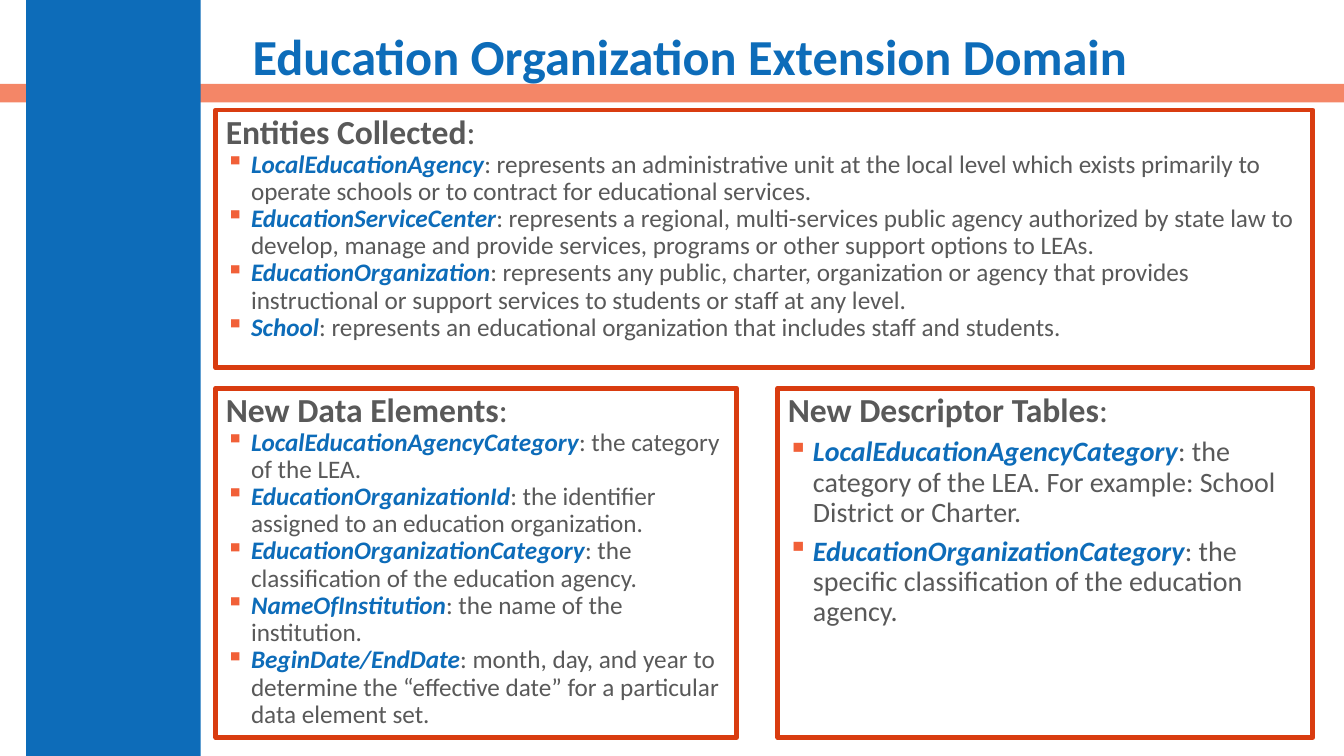
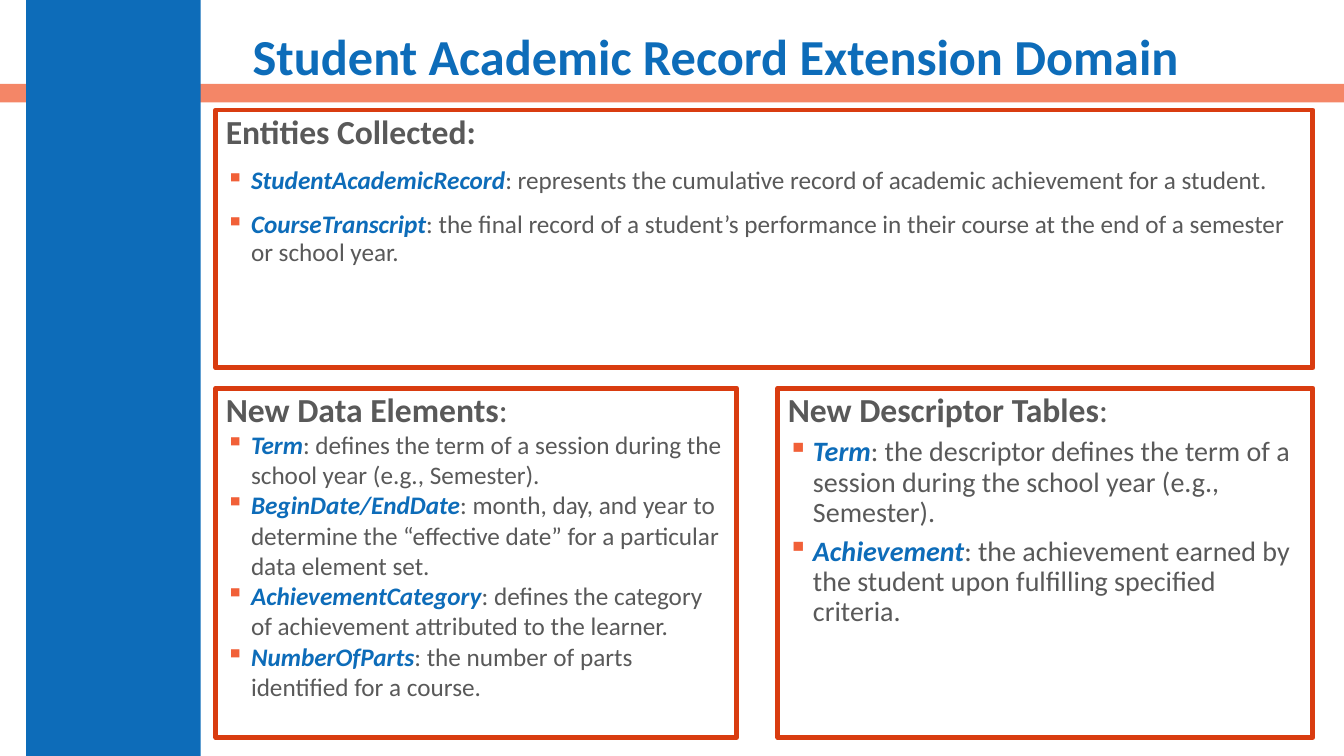
from dataclasses import dataclass

from lxml import etree
from pptx import Presentation
from pptx import util as u
from pptx.dml.color import RGBColor
from pptx.enum import shapes, text
from pptx.oxml import ns


@dataclass(frozen=True)
class Theme:
    font: str = "Calibri"
    blue: str = "0D6CB9"
    orange: str = "F16038"
    border: str = "D93C10"
    body: str = "595959"
    title_size: float = 36
    heading_size: float = 24
    border_width: float = 3.5
    stripe_opacity: int = 76
    line_spacing: float = 0.9
    bullet_indent: float = 0.25


@dataclass(frozen=True)
class Area:
    column: float
    row: float
    columns: float
    rows: float


@dataclass(frozen=True)
class Entry:
    term: str
    meaning: str


@dataclass(frozen=True)
class Panel:
    heading: str
    entries: tuple[Entry, ...]
    size: float = 18
    space_before: float = 0
    line_spacing: float = 0.9
    bold_colon: bool = False


@dataclass(frozen=True)
class Domain:
    title: str
    panels: tuple[Panel, Panel, Panel]


THEME = Theme()
WIDTH, HEIGHT = u.Inches(13.333), u.Inches(7.5)
GRID_COLUMNS, GRID_ROWS = 16, 9

STRIPE = Area(0, 1, GRID_COLUMNS, 0.22)
SIDEBAR = Area(0.31, 0, 2.08, GRID_ROWS)
TITLE = Area(2.89, 0.22, 12.64, 0.98)

LEFT, RIGHT, TOP, BOTTOM = 2.57, 15.63, 1.31, 8.78
LOWER_TOP, RIGHT_START = 4.62, 9.26
ROW_GAP, COLUMN_GAP = 0.24, 0.49
PANEL_AREAS = (
    Area(LEFT, TOP, RIGHT - LEFT, LOWER_TOP - ROW_GAP - TOP),
    Area(LEFT, LOWER_TOP, RIGHT_START - COLUMN_GAP - LEFT, BOTTOM - LOWER_TOP),
    Area(RIGHT_START, LOWER_TOP, RIGHT - RIGHT_START, BOTTOM - LOWER_TOP),
)

DATES = Entry(
    "BeginDate/EndDate",
    "month, day, and year to determine the “effective date” for a particular data element set.",
)

DOMAINS = (
    Domain("Education Organization Extension Domain", (
        Panel("Entities Collected", (
            Entry("LocalEducationAgency", "represents an administrative unit at the local level which "
                  "exists primarily to operate schools or to contract for educational services."),
            Entry("EducationServiceCenter", "represents a regional, multi-services public agency "
                  "authorized by state law to develop, manage and provide services, programs or "
                  "other support options to LEAs."),
            Entry("EducationOrganization", "represents any public, charter, organization or agency "
                  "that provides instructional or support services to students or staff at any level."),
            Entry("School", "represents an educational organization that includes staff and students."),
        )),
        Panel("New Data Elements", (
            Entry("LocalEducationAgencyCategory", "the category of the LEA."),
            Entry("EducationOrganizationId", "the identifier assigned to an education organization."),
            Entry("EducationOrganizationCategory", "the classification of the education agency."),
            Entry("NameOfInstitution", "the name of the institution."),
            DATES,
        )),
        Panel("New Descriptor Tables", (
            Entry("LocalEducationAgencyCategory",
                  "the category of the LEA. For example: School District or Charter."),
            Entry("EducationOrganizationCategory",
                  "the specific classification of the education agency."),
        ), size=20, space_before=6),
    )),
    Domain("Student Academic Record Extension Domain", (
        Panel("Entities Collected", (
            Entry("StudentAcademicRecord",
                  "represents the cumulative record of academic achievement for a student."),
            Entry("CourseTranscript", "the final record of a student’s performance in their course "
                  "at the end of a semester or school year."),
        ), space_before=12, bold_colon=True),
        Panel("New Data Elements", (
            Entry("Term", "defines the term of a session during the school year (e.g., Semester)."),
            DATES,
            Entry("AchievementCategory",
                  "defines the category of achievement attributed to the learner."),
            Entry("NumberOfParts", "the number of parts identified for a course."),
        ), line_spacing=1),
        Panel("New Descriptor Tables", (
            Entry("Term", "the descriptor defines the term of a session during the school year "
                  "(e.g., Semester)."),
            Entry("Achievement",
                  "the achievement earned by the student upon fulfilling specified criteria."),
        ), size=20, space_before=6),
    )),
)


def place(area: Area) -> tuple[int, int, int, int]:
    return (
        round(area.column * WIDTH / GRID_COLUMNS),
        round(area.row * HEIGHT / GRID_ROWS),
        round(area.columns * WIDTH / GRID_COLUMNS),
        round(area.rows * HEIGHT / GRID_ROWS),
    )


def add_rectangle(slide, area: Area):
    shape = slide.shapes.add_shape(shapes.MSO_SHAPE.RECTANGLE, *place(area))
    shape.shadow.inherit = False
    return shape


def add_band(slide, area: Area, color: str, opacity: int = 100) -> None:
    shape = add_rectangle(slide, area)
    shape.fill.solid()
    shape.fill.fore_color.rgb = RGBColor.from_string(color)
    shape.line.fill.background()
    if opacity < 100:
        color_element = shape.fill._xPr.find(".//" + ns.qn("a:srgbClr"))
        etree.SubElement(color_element, ns.qn("a:alpha"), val=str(opacity * 1000))


def set_font(font, size: float, color: str) -> None:
    font.name = THEME.font
    font.size = u.Pt(size)
    font.color.rgb = RGBColor.from_string(color)


def add_title(slide, title: str) -> None:
    frame = slide.shapes.add_textbox(*place(TITLE)).text_frame
    frame.word_wrap = True
    frame.vertical_anchor = text.MSO_ANCHOR.MIDDLE
    paragraph = frame.paragraphs[0]
    paragraph.text = title
    paragraph.line_spacing = THEME.line_spacing
    set_font(paragraph.font, THEME.title_size, THEME.blue)
    paragraph.font.bold = True


def add_bullet(paragraph) -> None:
    properties = paragraph._p.get_or_add_pPr()
    indent = u.Inches(THEME.bullet_indent)
    properties.set("marL", str(indent))
    properties.set("indent", str(-indent))
    bullet_color = etree.SubElement(properties, ns.qn("a:buClr"))
    etree.SubElement(bullet_color, ns.qn("a:srgbClr"), val=THEME.orange)
    etree.SubElement(properties, ns.qn("a:buChar"), char="▪")


def add_run(paragraph, words: str, bold: bool):
    run = paragraph.add_run()
    run.text = words
    run.font.bold = bold
    return run


def add_entry(frame, entry: Entry, panel: Panel) -> None:
    paragraph = frame.add_paragraph()
    paragraph.alignment = text.PP_ALIGN.LEFT
    paragraph.line_spacing = panel.line_spacing
    paragraph.space_before = u.Pt(panel.space_before)
    add_bullet(paragraph)
    set_font(paragraph.font, panel.size, THEME.body)
    term = add_run(paragraph, entry.term, True)
    term.font.italic = True
    term.font.color.rgb = RGBColor.from_string(THEME.blue)
    add_run(paragraph, f": {entry.meaning}", False)


def add_panel(slide, area: Area, panel: Panel) -> None:
    shape = add_rectangle(slide, area)
    shape.fill.background()
    shape.line.color.rgb = RGBColor.from_string(THEME.border)
    shape.line.width = u.Pt(THEME.border_width)
    frame = shape.text_frame
    frame.word_wrap = True
    frame.vertical_anchor = text.MSO_ANCHOR.TOP
    heading = frame.paragraphs[0]
    heading.alignment = text.PP_ALIGN.LEFT
    heading.line_spacing = THEME.line_spacing
    set_font(heading.font, THEME.heading_size, THEME.body)
    add_run(heading, panel.heading, True)
    add_run(heading, ":", panel.bold_colon)
    for entry in panel.entries:
        add_entry(frame, entry, panel)


def add_domain_slide(presentation, domain: Domain) -> None:
    slide = presentation.slides.add_slide(presentation.slide_layouts[6])
    add_band(slide, STRIPE, THEME.orange, THEME.stripe_opacity)
    add_band(slide, SIDEBAR, THEME.blue)
    add_title(slide, domain.title)
    for area, panel in zip(PANEL_AREAS, domain.panels):
        add_panel(slide, area, panel)


def main() -> None:
    presentation = Presentation()
    presentation.slide_width, presentation.slide_height = WIDTH, HEIGHT
    for domain in DOMAINS:
        add_domain_slide(presentation, domain)
    presentation.save("out.pptx")


if __name__ == "__main__":
    main()
